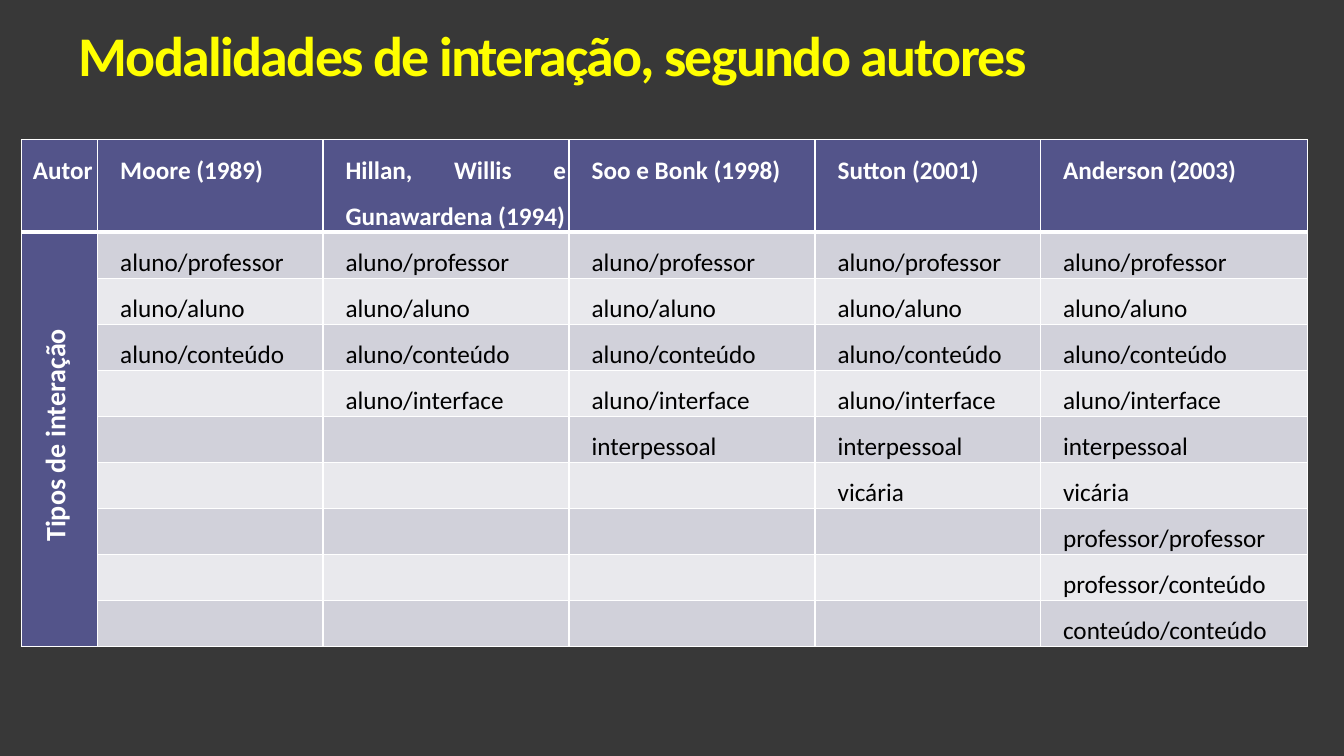
from lxml import etree
from pptx import Presentation
from pptx.dml.color import RGBColor
from pptx.enum.text import MSO_ANCHOR, PP_ALIGN
from pptx.oxml.ns import qn
from pptx.util import Cm, Pt

MIDDLE = MSO_ANCHOR.MIDDLE
LEFT, CENTER, JUSTIFY = PP_ALIGN.LEFT, PP_ALIGN.CENTER, PP_ALIGN.JUSTIFY

DARK = RGBColor(0x38, 0x38, 0x38)
YELLOW = RGBColor(0xFF, 0xFF, 0x00)
WHITE = RGBColor(0xFF, 0xFF, 0xFF)
BLACK = RGBColor(0x00, 0x00, 0x00)
PURPLE = RGBColor(0x53, 0x54, 0x8A)
BANDS = (RGBColor(0xD1, 0xD1, 0xDA), RGBColor(0xE9, 0xE9, 0xED))

FONT = "Calibri"
COL_WIDTHS = (1.92, 5.68, 6.2, 6.2, 5.68, 6.72)
HEADER_HEIGHT, ROW_HEIGHT = 2.33, 1.16
TYPES = (
    "aluno/professor", "aluno/aluno", "aluno/conteúdo", "aluno/interface",
    "interpessoal", "vicária", "professor/professor", "professor/conteúdo",
    "conteúdo/conteúdo",
)
AUTHORS = (
    ("Moore (1989)", 3),
    ("Hillan, Willis e Gunawardena (1994)", 4),
    ("Soo e Bonk (1998)", 5),
    ("Sutton (2001)", 6),
    ("Anderson (2003)", 9),
)


def write(tf, text, size=18, color=BLACK, bold=False, align=JUSTIFY,
          line=1.5, after=6, indent=0.5, tracking=0):
    p = tf.paragraphs[0]
    p.alignment = align
    p.line_spacing = line
    p.space_after = Pt(after)
    pPr = p._p.get_or_add_pPr()
    pPr.set("marL", str(Cm(indent)))
    pPr.set("indent", "0")
    r = p.add_run()
    r.text = text
    r.font.name = FONT
    r.font.size = Pt(size)
    r.font.bold = bold
    r.font.color.rgb = color
    if tracking:
        r._r.get_or_add_rPr().set("spc", str(tracking))


def style_cell(cell, fill, top=1, bottom=1):
    cell.margin_left = cell.margin_right = Cm(0.07)
    cell.margin_top = cell.margin_bottom = 0
    tcPr = cell._tc.get_or_add_tcPr()
    for side, width in (("lnL", 1), ("lnR", 1), ("lnT", top), ("lnB", bottom)):
        ln = etree.SubElement(tcPr, qn(f"a:{side}"), w=str(Pt(width)))
        solid = etree.SubElement(ln, qn("a:solidFill"))
        etree.SubElement(solid, qn("a:srgbClr"), val=str(WHITE))
    cell.fill.solid()
    cell.fill.fore_color.rgb = fill


def add_title(s, left, top, width, height):
    sp = s.shapes.add_textbox(Cm(left), Cm(top), Cm(width), Cm(height))
    tf = sp.text_frame
    tf.word_wrap = True
    tf.vertical_anchor = MIDDLE
    write(tf, "Modalidades de interação, segundo autores", size=40, color=YELLOW,
          bold=True, align=LEFT, line=0.85, after=0, indent=0, tracking=-120)


def add_interactions(s, left, top):
    height = HEADER_HEIGHT + ROW_HEIGHT * len(TYPES)
    table = s.shapes.add_table(len(TYPES) + 1, len(COL_WIDTHS), Cm(left), Cm(top),
                               Cm(sum(COL_WIDTHS)), Cm(height)).table
    for col, width in zip(table.columns, COL_WIDTHS):
        col.width = Cm(width)
    for i, row in enumerate(table.rows):
        row.height = Cm(ROW_HEIGHT if i else HEADER_HEIGHT)
        for j, cell in enumerate(row.cells):
            fill = BANDS[(i - 1) % 2] if i and j else PURPLE
            style_cell(cell, fill, top=3 if i == 1 else 1, bottom=1 if i else 3)

    write(table.cell(0, 0).text_frame, "Autor", color=WHITE, bold=True, indent=0.22)
    side = table.cell(1, 0)
    side.merge(table.cell(len(TYPES), 0))
    side._tc.get_or_add_tcPr().set("vert", "vert270")
    write(side.text_frame, "Tipos de interação", size=20, color=WHITE, bold=True,
          align=CENTER, indent=0.2)

    for j, (author, count) in enumerate(AUTHORS, 1):
        write(table.cell(0, j).text_frame, author, color=WHITE, bold=True)
        for i, kind in enumerate(TYPES[:count], 1):
            write(table.cell(i, j).text_frame, kind)


def main():
    prs = Presentation()
    prs.slide_width, prs.slide_height = Cm(33.87), Cm(19.05)
    s = prs.slides.add_slide(prs.slide_layouts[6])
    s.background.fill.solid()
    s.background.fill.fore_color.rgb = DARK
    add_title(s, 1.73, 0, 29.6, 3)
    add_interactions(s, 0.54, 3.52)
    prs.save("out.pptx")


if __name__ == "__main__":
    main()
